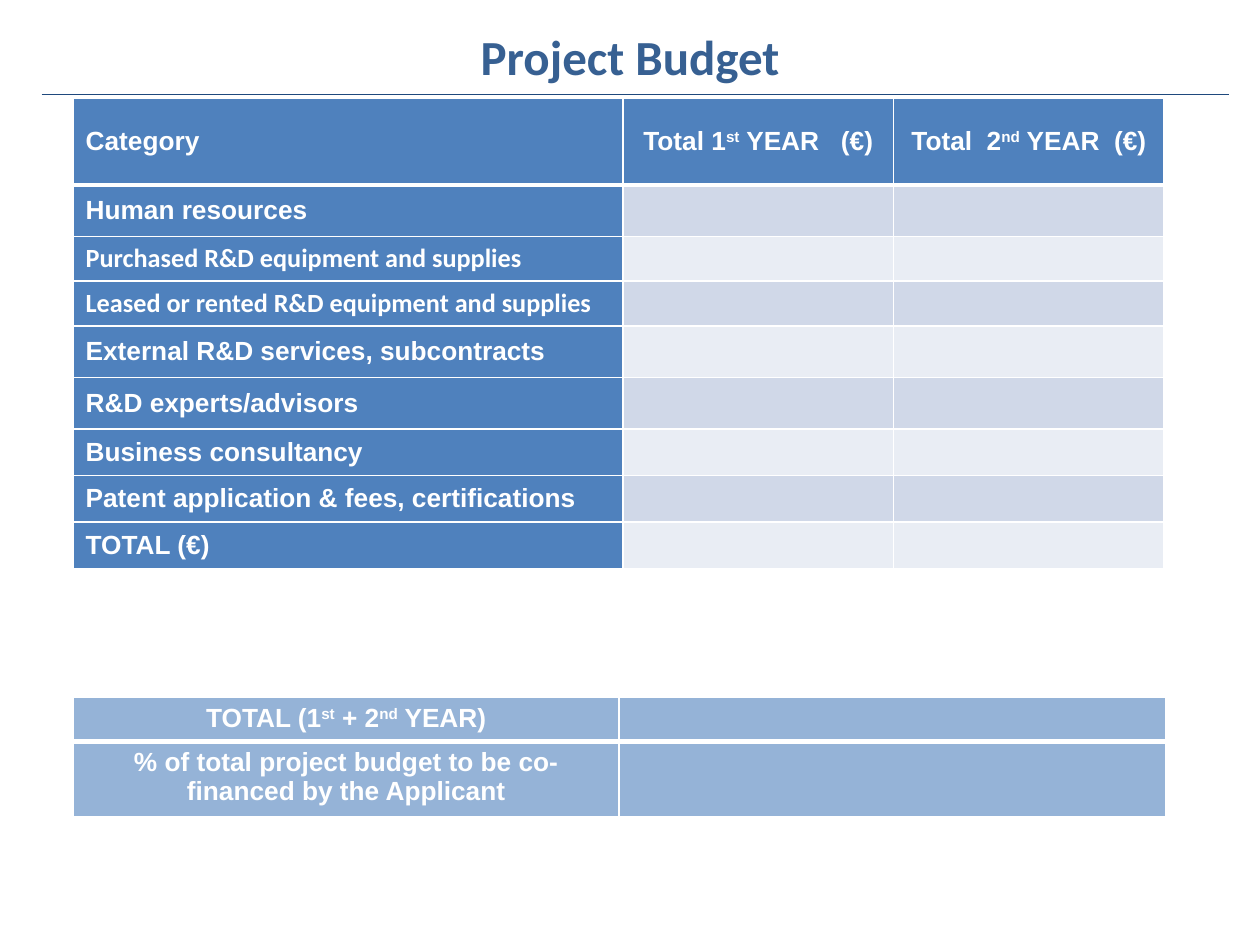
from lxml.etree import SubElement
from pptx import Presentation
from pptx.dml.color import RGBColor
from pptx.enum.shapes import MSO_CONNECTOR
from pptx.enum.text import MSO_ANCHOR, PP_ALIGN
from pptx.oxml.ns import qn
from pptx.util import Inches, Pt

WIDE, HIGH = Inches(10), Inches(7.5)
WHITE, BLUE, PALE = "FFFFFF", "4F81BD", "95B3D7"
BANDS = ("D0D8E8", "E9EDF4")
HEAD = ("Category", "Total 1^st^ YEAR   (€)", "Total  2^nd^ YEAR  (€)")
ITEMS = (
    ("Human resources", 41, "Arial"),
    ("Purchased R&D equipment and supplies", 35, "Calibri"),
    ("Leased or rented R&D equipment and supplies", 35, "Calibri"),
    ("External R&D services, subcontracts", 41, "Arial"),
    ("R&D experts/advisors", 41, "Arial"),
    ("Business consultancy", 37, "Arial"),
    ("Patent application & fees, certifications", 37, "Arial"),
    ("TOTAL (€)", 37, "Arial"),
)
SUMS = ("TOTAL (1^st^ + 2^nd^ YEAR)",
        "% of total project budget to be co-financed by the Applicant")


def tint(code):
    """Turn a hex string into a colour."""
    return RGBColor.from_string(code)


def place(box):
    """Turn percentages of the slide into left, top, width and height."""
    x, y, w, h = box
    return [int(part * side / 100)
            for part, side in ((x, WIDE), (y, HIGH), (w, WIDE), (h, HIGH))]


def write(frame, text, font="Arial", size=15, color=WHITE,
          align=PP_ALIGN.LEFT):
    """Write bold text in which carets enclose superscripts."""
    para = frame.paragraphs[0]
    para.alignment = align
    for spot, piece in enumerate(text.split("^")):
        run = para.add_run()
        run.text = piece
        run.font.name, run.font.size, run.font.bold = font, Pt(size), True
        run.font.color.rgb = tint(color)
        if spot % 2:
            run._r.get_or_add_rPr().set("baseline", "30000")


def edge(cell, row):
    """Draw white borders, heavy between the first two rows."""
    widths = {"L": 1, "R": 1, "T": 3 if row == 1 else 1,
              "B": 3 if row == 0 else 1}
    for side, width in widths.items():
        line = SubElement(cell._tc.get_or_add_tcPr(), qn(f"a:ln{side}"),
                          w=str(Pt(width)))
        fill = SubElement(line, qn("a:solidFill"))
        SubElement(fill, qn("a:srgbClr"), val=WHITE)


def paint(cell, row, fill, text="", anchor=MSO_ANCHOR.MIDDLE, **form):
    """Fill one cell with its borders, colour and text."""
    edge(cell, row)
    cell.fill.solid()
    cell.fill.fore_color.rgb = tint(fill)
    cell.vertical_anchor = anchor
    if text:
        write(cell.text_frame, text, **form)
    else:
        para = cell.text_frame.paragraphs[0]
        SubElement(para._p, qn("a:endParaRPr"), sz="1200")


def grid(slide, box, cols, rows):
    """Add a table whose columns and rows share the box by weight."""
    x, y, w, h = place(box)
    table = slide.shapes.add_table(len(rows), len(cols), x, y, w, h).table
    for col, part in zip(table.columns, cols):
        col.width = int(w * part / sum(cols))
    for row, part in zip(table.rows, rows):
        row.height = int(h * part / sum(rows))
    return table


def banner(slide, box):
    """Place the title and the rule below it."""
    title = slide.shapes.title
    title.left, title.top, title.width, title.height = place(box)
    title.text_frame.vertical_anchor = MSO_ANCHOR.MIDDLE
    write(title.text_frame, "Project Budget", font="Calibri", size=28,
          color="376092", align=PP_ALIGN.CENTER)
    x, y, w, h = place((3.3, box[1] + box[3], 94.2, 0))
    rule = slide.shapes.add_connector(MSO_CONNECTOR.STRAIGHT, x, y, x + w, y)
    rule.line.color.rgb = tint("1F497D")
    rule.line.width = Pt(1)
    SubElement(rule._element.spPr, qn("a:effectLst"))


def budget(slide, box):
    """Place the table of costs by category and year."""
    table = grid(slide, box, (437, 215, 215),
                 [69] + [part for _, part, _ in ITEMS])
    for col, text in enumerate(HEAD):
        paint(table.cell(0, col), 0, BLUE, text,
              align=PP_ALIGN.CENTER if col else PP_ALIGN.LEFT)
    for row, (text, _, font) in enumerate(ITEMS, 1):
        paint(table.cell(row, 0), row, BLUE, text, font=font)
        for col in (1, 2):
            paint(table.cell(row, col), row, BANDS[(row - 1) % 2])


def totals(slide, box):
    """Place the table of overall sums."""
    table = grid(slide, box, (1, 1), (35, 60))
    for row, text in enumerate(SUMS):
        paint(table.cell(row, 0), row, PALE, text, anchor=MSO_ANCHOR.TOP,
              align=PP_ALIGN.CENTER)
        paint(table.cell(row, 1), row, PALE, anchor=MSO_ANCHOR.TOP)


def main():
    """Build and save the slide."""
    deck = Presentation()
    deck.slide_width, deck.slide_height = WIDE, HIGH
    slide = deck.slides.add_slide(deck.slide_layouts[5])
    banner(slide, (5, 1.73, 90, 8.27))
    budget(slide, (5.8, 10.4, 86.6, 49.6))
    totals(slide, (5.8, 73.8, 86.7, 12.67))
    deck.save("out.pptx")


if __name__ == "__main__":
    main()
